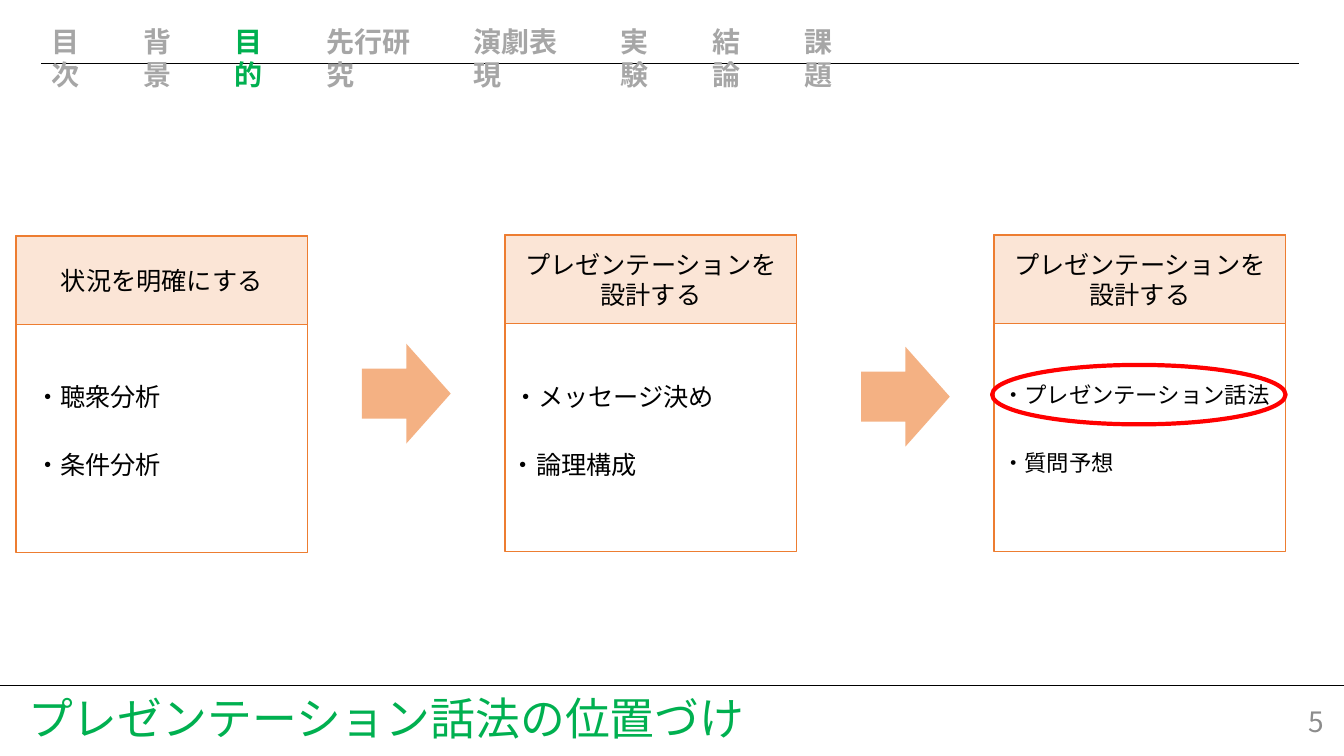
from lxml import etree
from pptx import Presentation
from pptx import util as u
from pptx.dml.color import RGBColor
from pptx.enum import lang, shapes, text
from pptx.oxml import ns

COLORS = {"green": "00B050", "gray": "A6A6A6", "number": "8C8C8C", "black": "000000",
          "orange": "ED7D31", "peach": "FBE5D6", "arrow": "F4B183", "red": "FF0000"}
CJK = "Noto Sans CJK JP"
SECTIONS = ["目次", "背景", "目的", "先行研究", "演劇表現", "実験", "結論", "課題"]
CURRENT = "目的"
TITLE = "プレゼンテーション話法の位置づけ"
PAGE_NUMBER = "5"
STAGES = [
    {"heading": "状況を明確にする", "size": 18, "top": 2.34,
     "items": [("・聴衆分析", 0.09, 1.46), ("・条件分析", 0.09, 1.46)]},
    {"heading": "プレゼンテーションを設計する", "size": 18, "top": 2.33,
     "items": [([("・", CJK), ("メッセージ", "Arial"), ("決め", CJK)], -0.02, 2.22),
               ("・論理構成", -0.04, 1.46)]},
    {"heading": "プレゼンテーションを設計する", "size": 16, "top": 2.33,
     "items": [("・プレゼンテーション話法", -0.02, 2.89), ("・質問予想", -0.02, 1.32)]},
]
ARROWS = [(3.59, 3.41), (8.54, 3.44)]

WIDTH, HEIGHT = 13.33, 7.5
STAGE_LEFT, STAGE_STEP, STAGE_WIDTH = 0.16, 4.85, 2.89
STAGE_HEIGHT, HEADING_HEIGHT = 3.14, 0.88
ITEM_TOP, ITEM_STEP = 3.73, 0.68
NAV_LEFT, NAV_GAP = 0.41, 0.16
FOOTER_TOP = 6.8

deck = Presentation()
deck.slide_width, deck.slide_height = u.Inches(WIDTH), u.Inches(HEIGHT)
page = deck.slides.add_slide(deck.slide_layouts[6])


def rgb(name):
    return RGBColor.from_string(COLORS[name])


def inches(*lengths):
    return [u.Inches(length) for length in lengths]


def write(box, content, size=18, font=CJK, color="black", bold=False,
          align="LEFT", anchor="TOP", wrap=True):
    frame = box.text_frame
    frame.word_wrap = wrap
    frame.vertical_anchor = getattr(text.MSO_ANCHOR, anchor)
    para = frame.paragraphs[0]
    para.alignment = getattr(text.PP_ALIGN, align)
    for words, face in [(content, font)] if isinstance(content, str) else content:
        span = para.add_run()
        span.text = words
        span.font.size, span.font.bold = u.Pt(size), bold
        span.font.name = face
        span.font.color.rgb = rgb(color)
        span.font.language_id = lang.MSO_LANGUAGE_ID.JAPANESE
        east = etree.SubElement(span.font._element, ns.qn("a:ea"))
        east.set("typeface", face)


def add_text(content, left, top, width, height, **style):
    write(page.shapes.add_textbox(*inches(left, top, width, height)), content, **style)


def add_box(kind, left, top, width, height, fill=None, line=None, weight=1):
    box = page.shapes.add_shape(getattr(shapes.MSO_SHAPE, kind),
                                *inches(left, top, width, height))
    box.shadow.inherit = False
    if fill:
        box.fill.solid()
        box.fill.fore_color.rgb = rgb(fill)
    else:
        box.fill.background()
    if line:
        box.line.color.rgb = rgb(line)
        box.line.width = u.Pt(weight)
    else:
        box.line.fill.background()
    return box


def add_rule(left, right, top, weight):
    rule = page.shapes.add_connector(shapes.MSO_CONNECTOR.STRAIGHT,
                                     *inches(left, top, right, top))
    rule.line.color.rgb = rgb("black")
    rule.line.width = u.Pt(weight)
    etree.SubElement(rule._element.spPr, ns.qn("a:effectLst"))


add_text(PAGE_NUMBER, 10.23, 6.96, 3, 0.4, size=20, color="number",
         align="RIGHT", anchor="MIDDLE")
add_rule(NAV_LEFT, 12.88, 0.63, 0.5)
add_rule(0, WIDTH, FOOTER_TOP, 0.25)
add_text(TITLE, 0.18, FOOTER_TOP, 7.38, 0.64, size=32, color="green", wrap=False)

left = NAV_LEFT
for section in SECTIONS:
    width = 0.75 if len(section) == 2 else 1.3
    add_text(section, left, 0.19, width, 0.44, size=20, bold=True,
             color="green" if section == CURRENT else "gray")
    left += width + NAV_GAP

for column, stage in enumerate(STAGES):
    left = STAGE_LEFT + column * STAGE_STEP
    add_box("RECTANGLE", left, stage["top"], STAGE_WIDTH, STAGE_HEIGHT, line="orange")
    heading = add_box("RECTANGLE", left, stage["top"], STAGE_WIDTH, HEADING_HEIGHT,
                      fill="peach", line="orange")
    write(heading, stage["heading"], font="Arial", align="CENTER", anchor="MIDDLE")
    for row, (item, shift, width) in enumerate(stage["items"]):
        add_text(item, left + shift, ITEM_TOP + row * ITEM_STEP, width, 0.4,
                 size=stage["size"], wrap=False)

for left, top in ARROWS:
    add_box("RIGHT_ARROW", left, top, 0.88, 0.99, fill="arrow")
add_box("OVAL", 9.84, 3.62, 2.91, 0.59, line="red", weight=3)

deck.save("out.pptx")
